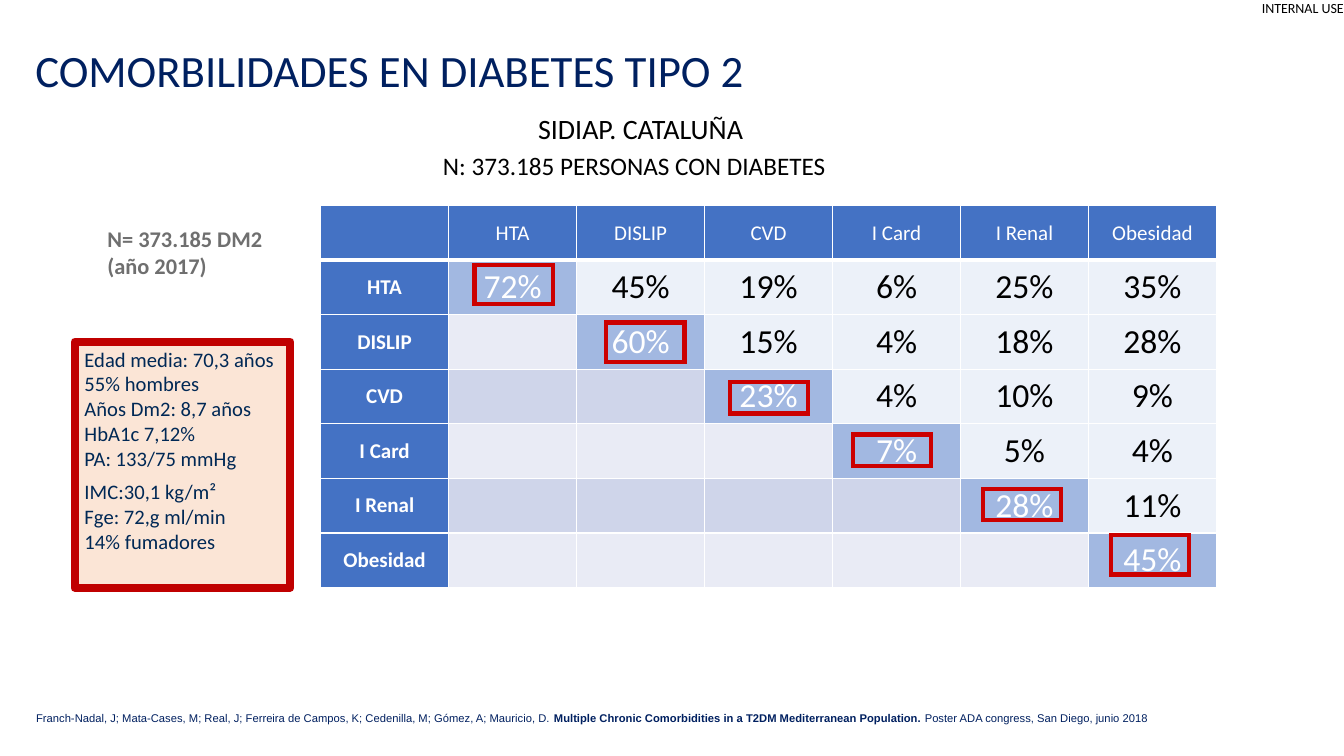
from typing import NamedTuple

from lxml import etree
from pptx import Presentation
from pptx import util as u
from pptx.dml.color import RGBColor
from pptx.enum import shapes, text
from pptx.oxml.ns import qn

WHITE = RGBColor(0xFF, 0xFF, 0xFF)
BLACK = RGBColor(0, 0, 0)
NAVY = RGBColor(0x00, 0x20, 0x60)
PROFILE_INK = RGBColor(0x00, 0x28, 0x55)
GRAY = RGBColor(0x6F, 0x6F, 0x6F)
PEACH = RGBColor(0xFB, 0xE5, 0xD6)
DARK_RED = RGBColor(0xC0, 0x00, 0x00)
RED = RGBColor(0xCC, 0x00, 0x00)
HEADER_BLUE = RGBColor(0x44, 0x72, 0xC4)
DIAGONAL_BLUE = RGBColor(0xA2, 0xB8, 0xE1)
VALUE_BLUE = RGBColor(0xEC, 0xF1, 0xF9)
BANDS = (RGBColor(0xCF, 0xD5, 0xEA), RGBColor(0xE9, 0xEB, 0xF5))

CONDITIONS = ["HTA", "DISLIP", "CVD", "I Card", "I Renal", "Obesidad"]
# Each row starts on the diagonal
PERCENTAGES = [
    [72, 45, 19, 6, 25, 35],
    [60, 15, 4, 18, 28],
    [23, 4, 10, 9],
    [7, 5, 4],
    [28, 11],
    [45],
]
PROFILE = ["Edad media: 70,3 años", "55% hombres", "Años Dm2: 8,7 años",
           "HbA1c 7,12%", "PA: 133/75 mmHg", "IMC:30,1 kg/m²",
           "Fge: 72,g ml/min", "14% fumadores"]


class Area(NamedTuple):
    """Left, top, width and height in centimetres."""
    left: float
    top: float
    width: float
    height: float

    def lengths(self) -> list:
        return [u.Cm(value) for value in self]


MARKERS = [
    Area(11.96, 6.68, 1.98, 0.99),
    Area(15.27, 8.13, 1.98, 0.99),
    Area(18.39, 9.63, 1.98, 0.79),
    Area(21.49, 10.95, 1.98, 0.79),
    Area(24.77, 12.32, 1.98, 0.79),
    Area(27.99, 13.49, 1.98, 0.99),
]


def add_span(para, words: str, *, size: float, color: RGBColor,
             font: str = "Calibri", bold: bool = False) -> None:
    span = para.add_run()
    span.text = words
    span.font.name = font
    span.font.size = u.Pt(size)
    span.font.bold = bold
    span.font.color.rgb = color


def write(frame, words: str, *, align=text.PP_ALIGN.LEFT, before: float = 0,
          indent: float = 0, **style):
    """Fill the empty first paragraph, or append a new one."""
    para = frame.paragraphs[0]
    if para.runs:
        para = frame.add_paragraph()
    para.alignment = align
    if before:
        para.space_before = u.Pt(before)
    if indent:
        para._p.get_or_add_pPr().set("marL", str(u.Cm(indent)))
    add_span(para, words, **style)
    return para


def add_text_box(page, area: Area, *, wrap: bool = True, inset: bool = True):
    frame = page.shapes.add_textbox(*area.lengths()).text_frame
    frame.word_wrap = wrap
    if not inset:
        frame.margin_left = frame.margin_right = 0
        frame.margin_top = frame.margin_bottom = 0
    return frame


def add_rectangle(page, area: Area, *, line: RGBColor, weight: float,
                  join: str, fill: RGBColor | None = None):
    box = page.shapes.add_shape(shapes.MSO_SHAPE.RECTANGLE, *area.lengths())
    box.shadow.inherit = False
    if fill is None:
        box.fill.background()
    else:
        box.fill.solid()
        box.fill.fore_color.rgb = fill
    box.line.color.rgb = line
    box.line.width = u.Pt(weight)
    etree.SubElement(box.line._get_or_add_ln(), qn(f"a:{join}"))
    return box


def format_cell(cell, fill: RGBColor, bottom: float = 1) -> None:
    cell.margin_left = cell.margin_right = u.Cm(0.33)
    cell.margin_top = cell.margin_bottom = u.Cm(0.17)
    cell.vertical_anchor = text.MSO_ANCHOR.MIDDLE
    properties = cell._tc.get_or_add_tcPr()
    for side, weight in (("L", 1), ("R", 1), ("T", 1), ("B", bottom)):
        border = etree.SubElement(properties, qn(f"a:ln{side}"),
                                  w=str(u.Pt(weight)))
        solid = etree.SubElement(border, qn("a:solidFill"))
        etree.SubElement(solid, qn("a:srgbClr"), val=str(WHITE))
    cell.fill.solid()
    cell.fill.fore_color.rgb = fill


def add_comorbidity_table(page) -> None:
    count = len(CONDITIONS) + 1
    area = Area(8.08, 5.18, 22.58, 9.63)
    table = page.shapes.add_table(count, count, *area.lengths()).table
    centre = text.PP_ALIGN.CENTER
    for row in range(count):
        for column in range(count):
            cell = table.cell(row, column)
            if row == 0 or column == 0:
                format_cell(cell, HEADER_BLUE, bottom=1 if row else 3)
                if row or column:
                    write(cell.text_frame, CONDITIONS[max(row, column) - 1],
                          align=centre, size=15, color=WHITE, bold=row > 0)
            elif column < row:
                format_cell(cell, BANDS[row % 2 == 0])
            else:
                diagonal = row == column
                format_cell(cell, DIAGONAL_BLUE if diagonal else VALUE_BLUE)
                write(cell.text_frame,
                      f"{PERCENTAGES[row - 1][column - row]}%", align=centre,
                      size=24, color=WHITE if diagonal else BLACK)


def main() -> None:
    deck = Presentation()
    deck.slide_width, deck.slide_height = u.Cm(33.87), u.Cm(19.05)
    page = deck.slides.add_slide(deck.slide_layouts[6])

    # Classification label
    label = add_text_box(page, Area(31.8, 0, 2.16, 0.43), wrap=False,
                         inset=False)
    write(label, "INTERNAL USE", size=10, color=BLACK)

    # Comorbidity matrix
    add_comorbidity_table(page)

    # Sample size
    sample = add_text_box(page, Area(2.46, 5.54, 4.83, 1.63), wrap=False)
    for words in ("N= 373.185 DM2", "(año 2017)"):
        write(sample, words, size=16, color=GRAY, bold=True)

    # Patient profile
    profile = add_rectangle(page, Area(1.88, 8.61, 5.44, 6.2), fill=PEACH,
                            line=DARK_RED, weight=5.75, join="round")
    frame = profile.text_frame
    frame.word_wrap = True
    frame.vertical_anchor = text.MSO_ANCHOR.TOP
    for words in PROFILE:
        write(frame, words, size=14.7, color=PROFILE_INK,
              before=6.5 if words.startswith("IMC") else 0)

    # Title and study population
    title = add_text_box(page, Area(0.64, 0.94, 28.35, 3.76))
    write(title, "COMORBILIDADES EN DIABETES TIPO 2", size=32, color=NAVY)
    write(title, "SIDIAP. CATALUÑA", indent=12.67, before=11.4, size=20,
          color=BLACK)
    write(title, "N: 373.185 PERSONAS CON DIABETES", indent=2.34, before=3.2,
          align=text.PP_ALIGN.CENTER, size=18, color=BLACK)

    # Reference
    reference = add_text_box(page, Area(0.66, 17.81, 29.79, 0.61))
    style = dict(size=8, color=NAVY, font="Arial")
    para = write(reference, "Franch-Nadal, J; Mata-Cases, M; Real, J; "
                 "Ferreira de Campos, K; Cedenilla, M; Gómez, A; "
                 "Mauricio, D. ", **style)
    add_span(para, "Multiple Chronic Comorbidities in a T2DM Mediterranean "
             "Population. ", bold=True, **style)
    add_span(para, "Poster ADA congress, San Diego, junio 2018", **style)

    # Markers around the diagonal values
    for area in MARKERS:
        add_rectangle(page, area, line=RED, weight=3, join="miter")

    deck.save("out.pptx")


if __name__ == "__main__":
    main()
